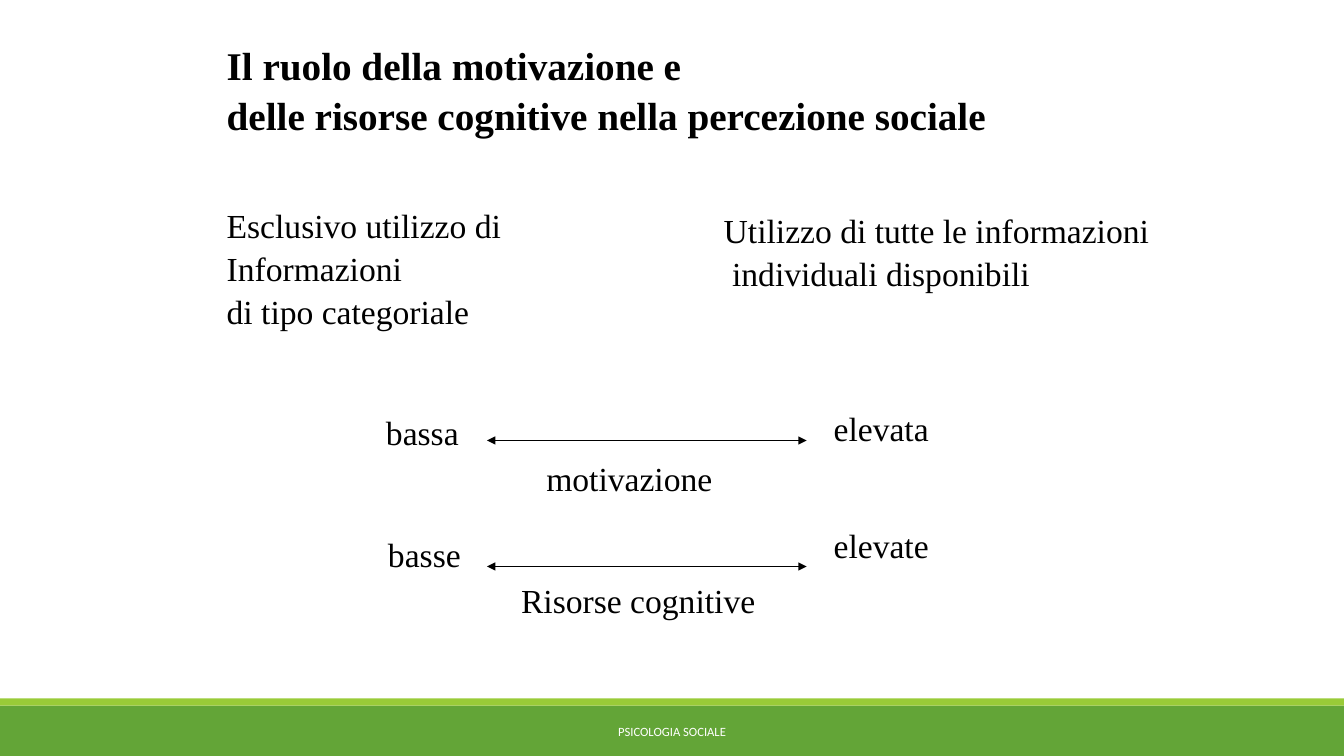
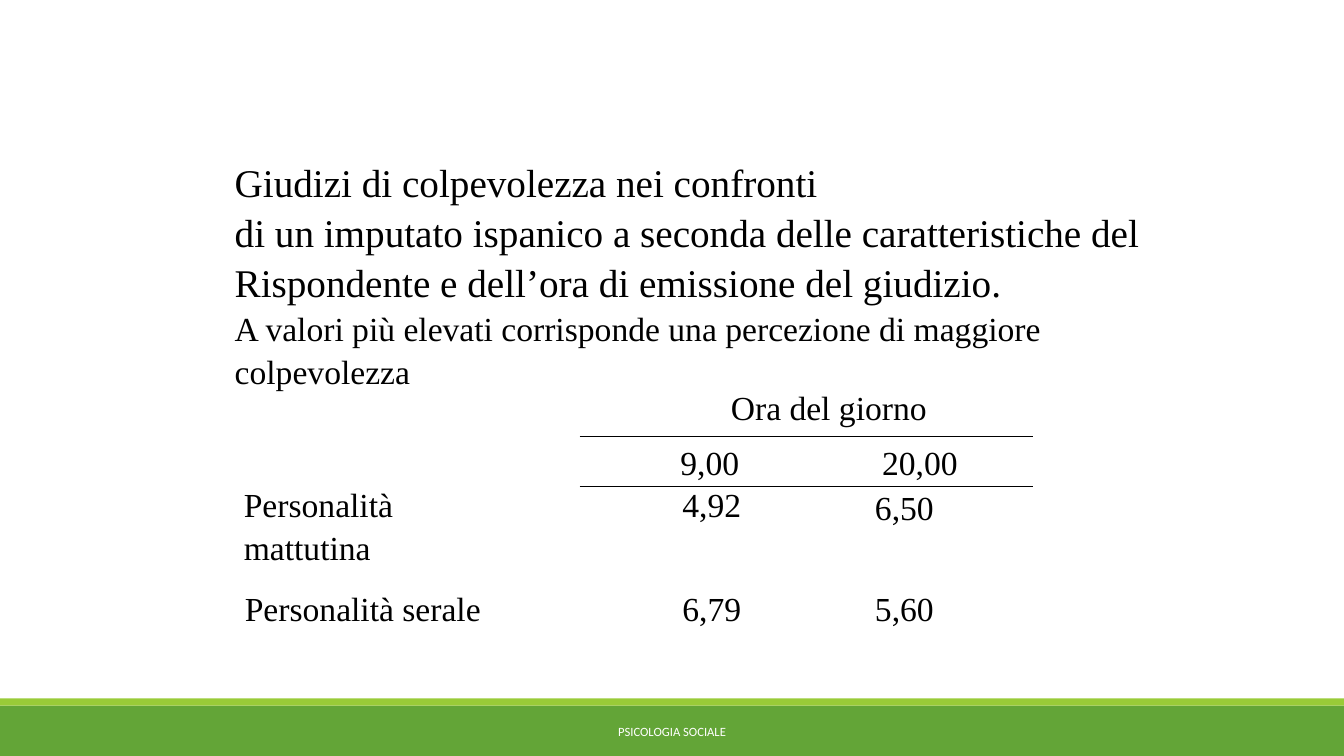
from lxml.etree import SubElement
from pptx import Presentation
from pptx.dml.color import RGBColor
from pptx.enum.shapes import MSO_CONNECTOR as Connector, MSO_SHAPE as Shape
from pptx.enum.text import MSO_ANCHOR as Anchor, PP_ALIGN as Align
from pptx.oxml.ns import qn
from pptx.util import Inches, Pt

BLACK = RGBColor(0x00, 0x00, 0x00)
WHITE = RGBColor(0xFF, 0xFF, 0xFF)
GREEN = RGBColor(0x63, 0xA5, 0x37)
LIME = RGBColor(0x99, 0xCB, 0x38)
BODY_FONT = "Times New Roman"
FOOTER_FONT = "Calibri"
WIDTH, HEIGHT = 13.33, 7.5
TITLE_SIZE, BODY_SIZE, FOOTER_SIZE = 28, 24, 9
LINE_HEIGHT = 0.5


def add_run(para, text, font, size, color, bold=False):
    span = para.add_run()
    span.text = text
    span.font.name = font
    span.font.size = Pt(size)
    span.font.color.rgb = color
    span.font.bold = bold


def add_box(page, left, top, width, height):
    box = page.shapes.add_textbox(Inches(left), Inches(top), Inches(width), Inches(height))
    box.text_frame.word_wrap = True
    return box.text_frame


def add_lines(page, left, top, width, height, lines, bold=False):
    frame = add_box(page, left, top, width, height)
    for index, (text, size) in enumerate(lines):
        para = frame.add_paragraph() if index else frame.paragraphs[0]
        para.line_spacing = 0.9
        para.space_before = Pt(size * 0.2)
        add_run(para, text, BODY_FONT, size, BLACK, bold)


def add_label(page, left, top, width, *texts):
    lines = [(text, BODY_SIZE) for text in texts]
    add_lines(page, left, top, width, 0.1 + 0.4 * len(lines), lines)


def add_rule(page, left, right, top, arrows=False):
    rule = page.shapes.add_connector(
        Connector.STRAIGHT, Inches(left), Inches(top), Inches(right), Inches(top))
    rule.line.color.rgb = BLACK
    rule.line.width = Pt(0.75)
    if arrows:
        outline = rule.line._get_or_add_ln()
        for end in ("a:headEnd", "a:tailEnd"):
            SubElement(outline, qn(end), type="triangle")
    SubElement(rule._element.spPr, qn("a:effectLst"))


def add_band(page, top, height, color):
    band = page.shapes.add_shape(
        Shape.RECTANGLE, 0, Inches(top), Inches(WIDTH), Inches(height))
    band.shadow.inherit = False
    band.fill.solid()
    band.fill.fore_color.rgb = color
    band.line.fill.background()


def add_page(deck):
    page = deck.slides.add_slide(deck.slide_layouts[6])
    add_band(page, 7, 0.5, GREEN)
    add_band(page, 6.93, 0.07, LIME)
    frame = add_box(page, 4.03, 7.06, 5.27, 0.4)
    frame.vertical_anchor = Anchor.MIDDLE
    para = frame.paragraphs[0]
    para.alignment = Align.CENTER
    add_run(para, "PSICOLOGIA SOCIALE", FOOTER_FONT, FOOTER_SIZE, WHITE)
    return page


def build_motivation(deck):
    page = add_page(deck)
    title = ("Il ruolo della motivazione e",
             "delle risorse cognitive nella percezione sociale")
    add_lines(page, 2.15, 0.41, 7.9, 1.03, [(text, TITLE_SIZE) for text in title], bold=True)
    add_label(page, 2.15, 2.03, 3.1,
              "Esclusivo utilizzo di", "Informazioni", "di tipo categoriale")
    add_label(page, 7.08, 2.08, 4.6,
              "Utilizzo di tutte le informazioni", " individuali disponibili")

    scales = (
        (4.37, ("bassa", 3.73, 4.08), ("elevata", 8.17, 4.04), ("motivazione", 5.32, 4.54)),
        (5.62, ("basse", 3.75, 5.29), ("elevate", 8.17, 5.2), ("Risorse cognitive", 5.07, 5.75)),
    )
    for arrow_top, *labels in scales:
        add_rule(page, 4.83, 8, arrow_top, arrows=True)
        for text, left, top in labels:
            add_label(page, left, top, 2.7 if " " in text else 2, text)


def build_judgements(deck):
    page = add_page(deck)
    add_lines(page, 2.23, 1.57, 9.4, 2.3, [
        ("Giudizi di colpevolezza nei confronti", TITLE_SIZE),
        ("di un imputato ispanico a seconda delle caratteristiche del", TITLE_SIZE),
        ("Rispondente e dell’ora di emissione del giudizio.", TITLE_SIZE),
        ("A valori più elevati corrisponde una percezione di maggiore", BODY_SIZE),
        ("colpevolezza", BODY_SIZE),
    ])
    add_label(page, 7.15, 3.83, 2.3, "Ora del giorno")
    add_label(page, 2.32, 4.8, 2.7, "Personalità", "mattutina")
    add_label(page, 2.33, 5.83, 2.7, "Personalità serale")

    figures = (
        ("9,00", 6.65, 4.38), ("20,00", 8.65, 4.38),
        ("4,92", 6.67, 4.8), ("6,50", 8.58, 4.83),
        ("6,79", 6.67, 5.83), ("5,60", 8.58, 5.83),
    )
    for text, left, top in figures:
        add_label(page, left, top, 1.1, text)
    for top in (4.33, 4.33 + LINE_HEIGHT):
        add_rule(page, 5.75, 10.25, top)


def main():
    deck = Presentation()
    deck.slide_width = Inches(WIDTH)
    deck.slide_height = Inches(HEIGHT)
    build_motivation(deck)
    build_judgements(deck)
    deck.save("out.pptx")


if __name__ == "__main__":
    main()
